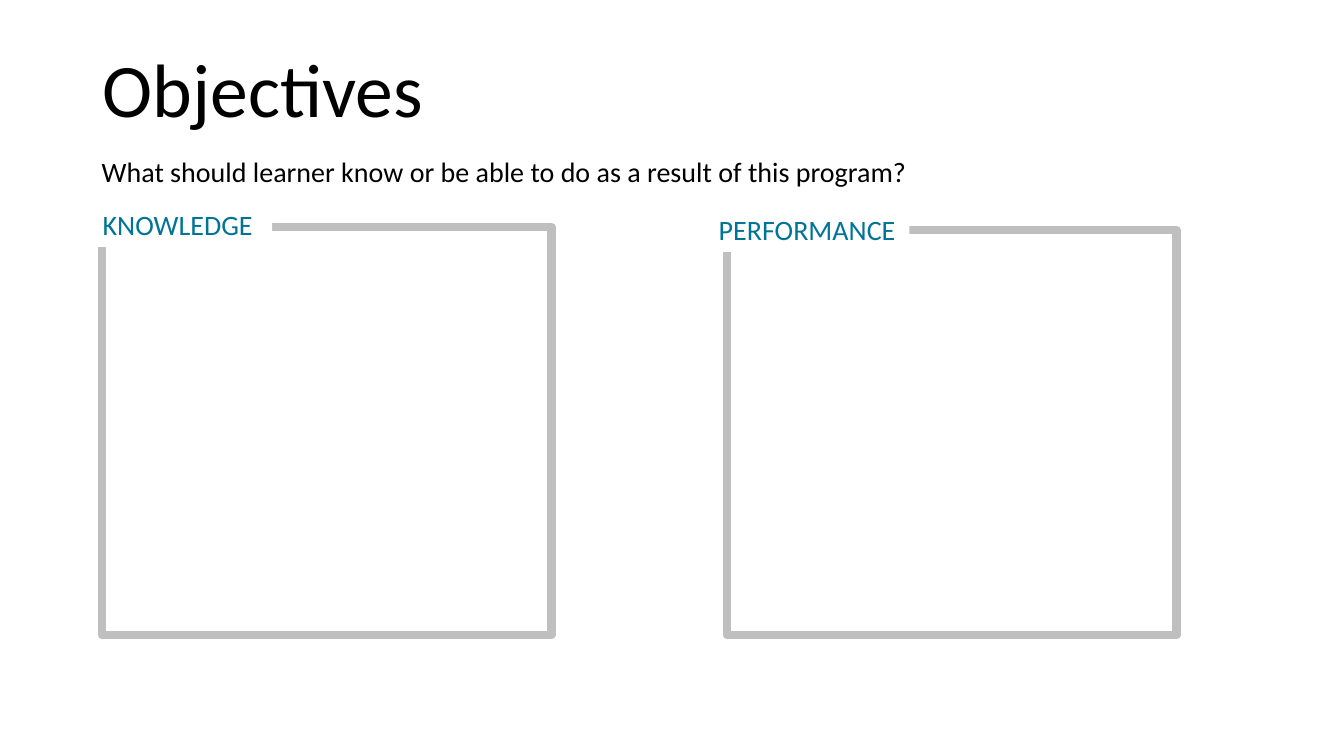
from pptx import Presentation
from pptx.dml.color import RGBColor
from pptx.enum.shapes import MSO_SHAPE
from pptx.enum.text import MSO_ANCHOR, MSO_AUTO_SIZE, PP_ALIGN
from pptx.util import Pt

RECTANGLE = MSO_SHAPE.RECTANGLE
LEFT = PP_ALIGN.LEFT
TOP, MIDDLE = MSO_ANCHOR.TOP, MSO_ANCHOR.MIDDLE
NO_AUTOFIT = MSO_AUTO_SIZE.NONE

EMU_PER_PX = 9144  # 100 px to the inch
TITLE_ONLY = 5
FONT = "Calibri"
COLORS = {"text": "000000", "label": "007497", "frame": "BFBFBF", "paper": "FFFFFF"}


def px(*lengths):
    return [length * EMU_PER_PX for length in lengths]


def color(name):
    return RGBColor.from_string(COLORS[name])


def write(part, text, size, color_name, anchor=TOP):
    frame = part.text_frame
    frame.word_wrap = True
    frame.auto_size = NO_AUTOFIT
    frame.vertical_anchor = anchor
    paragraph = frame.paragraphs[0]
    paragraph.alignment = LEFT
    run = paragraph.add_run()
    run.text = text
    run.font.name = FONT
    run.font.size = Pt(size)
    run.font.color.rgb = color(color_name)
    return paragraph


def add_heading(slide, box, heading, question):
    left, top, width, height = box
    # Title
    title = slide.shapes.title
    title.left, title.top, title.width, title.height = px(*box)
    write(title, heading, 54, "text", MIDDLE).line_spacing = 0.9
    # Guiding question below it
    prompt = slide.shapes.add_textbox(*px(left - 1, top + 128, 995, 44))
    write(prompt, question, 20, "text")


def add_objective(slide, box, name, label_box):
    """Empty frame whose top left corner is covered by its label."""
    left, top, _, _ = box
    shift_x, shift_y, label_width, label_height = label_box
    objective = slide.shapes.add_group_shape()
    # Frame
    frame = objective.shapes.add_shape(RECTANGLE, *px(*box))
    frame.shadow.inherit = False
    frame.fill.background()
    frame.line.color.rgb = color("frame")
    frame.line.width = Pt(6)
    # Label
    label = objective.shapes.add_shape(
        RECTANGLE, *px(left + shift_x, top + shift_y, label_width, label_height))
    label.shadow.inherit = False
    label.fill.solid()
    label.fill.fore_color.rgb = color("paper")
    label.line.fill.background()
    write(label, name, 20, "label")


def main():
    deck = Presentation()
    deck.slide_width, deck.slide_height = px(1333, 750)
    slide = deck.slides.add_slide(deck.slide_layouts[TITLE_ONLY])

    add_heading(slide, (92, 20, 1150, 145), "Objectives",
                "What should learner know or be able to do as a result of this program?")
    add_objective(slide, (101, 225, 446, 405), "KNOWLEDGE", (-9, -24, 178, 44))
    add_objective(slide, (721, 228, 446, 402), "PERFORMANCE", (-18, -22, 199, 44))

    deck.save("out.pptx")


if __name__ == "__main__":
    main()
